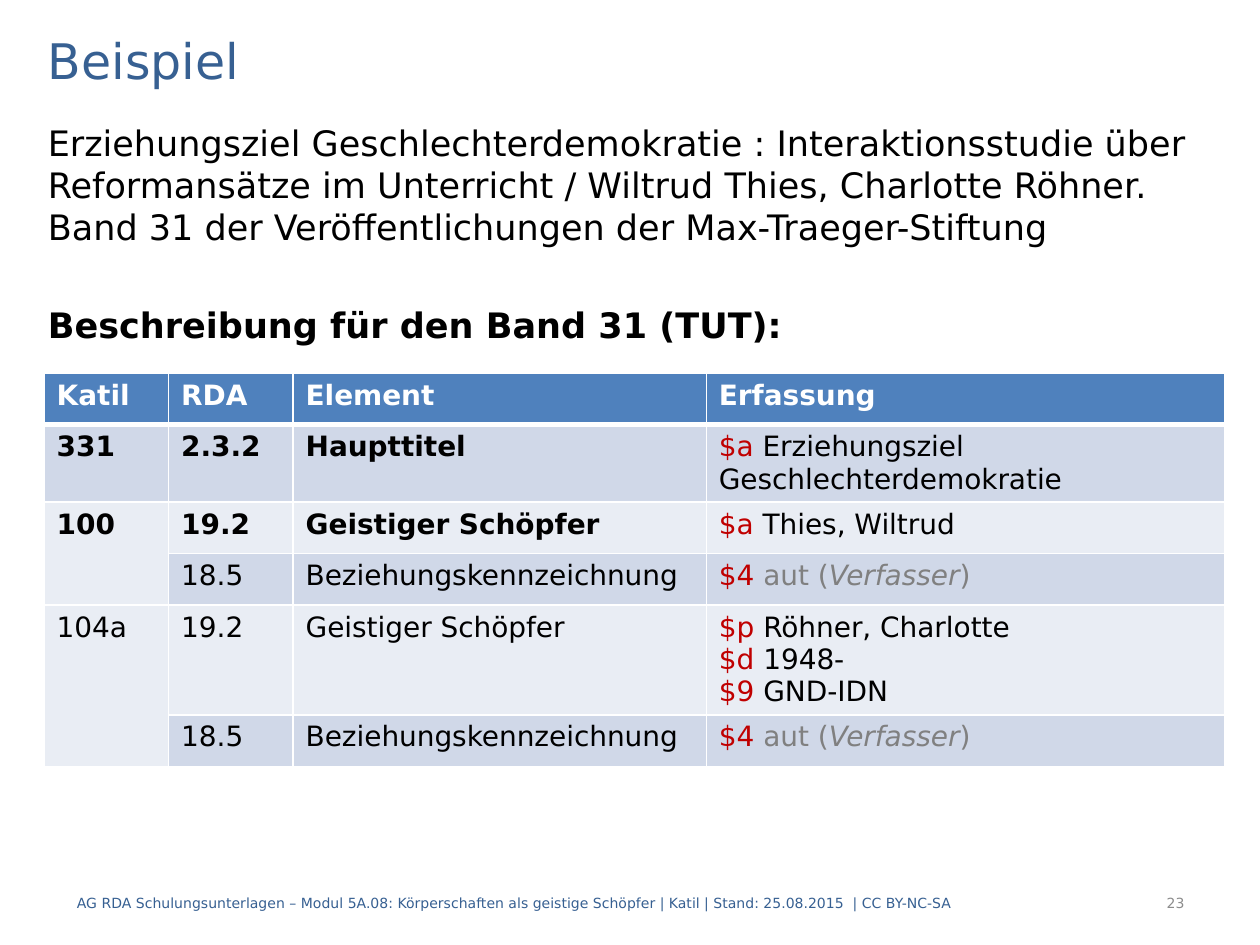
import pptx
import pptx.dml.color
import pptx.enum.text
import pptx.oxml
import pptx.oxml.ns
import pptx.util
from dataclasses import dataclass
from typing import Optional

Cm = pptx.util.Cm
Pt = pptx.util.Pt
ALIGN = pptx.enum.text.PP_ALIGN
ANCHOR = pptx.enum.text.MSO_ANCHOR

FONT = "DejaVu Sans"
BLUE, BLACK, WHITE = "376092", "000000", "FFFFFF"
RED, GREY, PALE_GREY = "C00000", "808080", "8C8C8C"
HEADER_FILL, DARK_BAND, LIGHT_BAND = "4F81BD", "D0D8E8", "E9EDF4"


@dataclass
class Span:
    text: str
    color: str = BLACK
    bold: bool = False
    italic: bool = False


@dataclass
class Row:
    height: float
    fill: str
    cells: list  # one list of lines per cell, each line a list of spans


def rgb(value: str) -> pptx.dml.color.RGBColor:
    return pptx.dml.color.RGBColor.from_string(value)


def style(para, size: float, color: Optional[str] = None, bold: bool = False) -> None:
    para.font.name = FONT
    para.font.size = Pt(size)
    para.font.bold = bold
    if color:
        para.font.color.rgb = rgb(color)


def place(shape, left: float, top: float, width: float, height: float) -> None:
    shape.left, shape.top = Cm(left), Cm(top)
    shape.width, shape.height = Cm(width), Cm(height)


def add_footer(page, text: str, left: float, width: float, color: str, align) -> None:
    box = page.shapes.add_textbox(Cm(left), Cm(17.7), Cm(width), Cm(1.02))
    frame = box.text_frame
    frame.word_wrap = True
    frame.vertical_anchor = ANCHOR.MIDDLE
    frame.text = text
    para = frame.paragraphs[0]
    para.alignment = align
    style(para, 8, color)


def set_borders(cell, bottom: float) -> None:
    properties = cell._tc.get_or_add_tcPr()
    widths = {"lnL": 1, "lnR": 1, "lnT": 1, "lnB": bottom}
    for index, (side, width) in enumerate(widths.items()):
        line = pptx.oxml.parse_xml(
            f'<a:{side} {pptx.oxml.ns.nsdecls("a")} w="{Pt(width)}"><a:solidFill>'
            f'<a:srgbClr val="{WHITE}"/></a:solidFill></a:{side}>'
        )
        properties.insert(index, line)


def fill_cell(cell, lines: list, fill: str, bottom: float) -> None:
    cell.fill.solid()
    cell.fill.fore_color.rgb = rgb(fill)
    set_borders(cell, bottom)
    para = cell.text_frame.paragraphs[0]
    style(para, 16)
    for number, line in enumerate(lines):
        if number:
            para.add_line_break()
        for span in line:
            run = para.add_run()
            run.text = span.text
            run.font.bold = span.bold
            run.font.italic = span.italic
            run.font.color.rgb = rgb(span.color)


def plain(*texts: str, color: str = BLACK, bold: bool = False) -> list:
    return [[[Span(text, color, bold)]] if text else [] for text in texts]


def coded(code: str, text: str) -> list:
    return [Span(f"{code} ", RED), Span(text)]


deck = pptx.Presentation()
deck.slide_width, deck.slide_height = Cm(25.4), Cm(19.05)
page = deck.slides.add_slide(deck.slide_layouts[1])

# Title
title = page.shapes.title
place(title, 0.71, 0.49, 24, 1.42)
title.text_frame.text = "Beispiel"
title.text_frame.vertical_anchor = ANCHOR.MIDDLE
title.text_frame.auto_size = pptx.enum.text.MSO_AUTO_SIZE.NONE
title.text_frame.paragraphs[0].alignment = ALIGN.LEFT
style(title.text_frame.paragraphs[0], 28, BLUE)

# Body: the work and the heading of the table
body = page.placeholders[1]
place(body, 0.71, 2.32, 24, 15.19)
body.text_frame.auto_size = pptx.enum.text.MSO_AUTO_SIZE.NONE
body.text_frame.text = (
    "Erziehungsziel Geschlechterdemokratie : Interaktionsstudie über "
    "Reformansätze im Unterricht / Wiltrud Thies, Charlotte Röhner. "
    "Band 31 der Veröffentlichungen der Max-Traeger-Stiftung\n"
    "Beschreibung für den Band 31 (TUT):"
)
for para, gap, bold in zip(body.text_frame.paragraphs, (4, 32), (False, True)):
    para.space_before = Pt(gap)
    style(para, 20, BLACK, bold)
    properties = para._p.get_or_add_pPr()
    properties.set("marL", "0")
    properties.set("indent", "0")
    no_bullet = pptx.oxml.parse_xml(f'<a:buNone {pptx.oxml.ns.nsdecls("a")}/>')
    properties.find(pptx.oxml.ns.qn("a:defRPr")).addprevious(no_bullet)

# Table
author = [[Span("$4 ", RED), Span("aut (", GREY),
           Span("Verfasser", GREY, italic=True), Span(")", GREY)]]
relation = Row(1.04, DARK_BAND,
               plain("", "18.5", "Beziehungskennzeichnung") + [author])
rows = [
    Row(1.04, HEADER_FILL,
        plain("Katil", "RDA", "Element", "Erfassung", color=WHITE, bold=True)),
    Row(1.53, DARK_BAND, plain("331", "2.3.2", "Haupttitel", bold=True)
        + [[coded("$a", "Erziehungsziel Geschlechterdemokratie")]]),
    Row(1.04, LIGHT_BAND, plain("100", "19.2", "Geistiger Schöpfer", bold=True)
        + [[coded("$a", "Thies, Wiltrud")]]),
    relation,
    Row(2.2, LIGHT_BAND, plain("104a", "19.2", "Geistiger Schöpfer")
        + [[coded("$p", "Röhner, Charlotte"), coded("$d", "1948-"),
            coded("$9", "GND-IDN")]]),
    relation,
]
widths = (2.51, 2.51, 8.33, 10.46)
table = page.shapes.add_table(
    len(rows), len(widths), Cm(0.89), Cm(7.52), Cm(sum(widths)),
    Cm(sum(row.height for row in rows)),
).table
for column, width in zip(table.columns, widths):
    column.width = Cm(width)
for r, row in enumerate(rows):
    table.rows[r].height = Cm(row.height)
    for c, lines in enumerate(row.cells):
        fill_cell(table.cell(r, c), lines, row.fill, bottom=1 if r else 3)
for top in (2, 4):
    table.cell(top, 0).merge(table.cell(top + 1, 0))

# Footer and page number
add_footer(
    page,
    "AG RDA Schulungsunterlagen – Modul 5A.08: Körperschaften als geistige "
    "Schöpfer | Katil | Stand: 25.08.2015  | CC BY-NC-SA",
    1.3, 21.21, BLUE, ALIGN.LEFT,
)
add_footer(page, "23", 20.09, 4.04, PALE_GREY, ALIGN.RIGHT)

deck.save("out.pptx")
